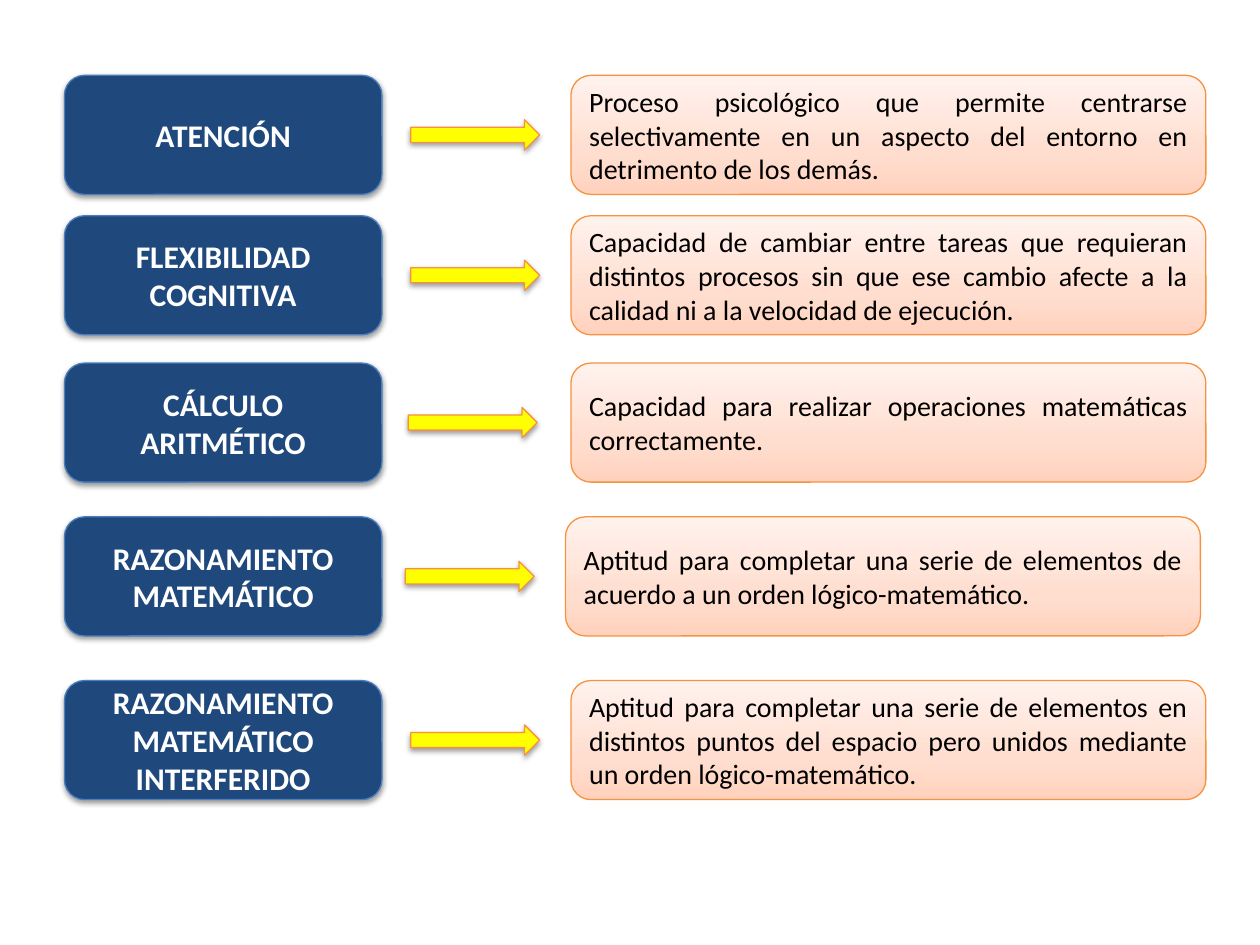
from copy import deepcopy
from dataclasses import dataclass

from lxml import etree
from pptx import Presentation
from pptx.dml.color import RGBColor
from pptx.enum import shapes, text
from pptx.oxml import ns
from pptx.util import Cm, Pt

ABILITIES = [
    ("ATENCIÓN",
     "Proceso psicológico que permite centrarse selectivamente en un aspecto del entorno en detrimento de los demás."),
    ("FLEXIBILIDAD COGNITIVA",
     "Capacidad de cambiar entre tareas que requieran distintos procesos sin que ese cambio afecte a la calidad ni a la velocidad de ejecución."),
    ("CÁLCULO ARITMÉTICO",
     "Capacidad para realizar operaciones matemáticas correctamente."),
    ("RAZONAMIENTO MATEMÁTICO",
     "Aptitud para completar una serie de elementos de acuerdo a un orden lógico-matemático."),
    ("RAZONAMIENTO MATEMÁTICO INTERFERIDO",
     "Aptitud para completar una serie de elementos en distintos puntos del espacio pero unidos mediante un orden lógico-matemático."),
]

ROW_TOPS = [1.52, 4.35, 7.32, 10.42, 13.72]
ARROW_LEFTS = [8.28, 8.28, 8.23, 8.17, 8.28]
MEANING_LEFTS = [11.51, 11.51, 11.51, 11.4, 11.51]
NAME_LEFT, NAME_WIDTH, MEANING_WIDTH, ROW_HEIGHT = 1.3, 6.4, 12.8, 2.4
ARROW_WIDTH, ARROW_HEIGHT = 2.6, 0.61


@dataclass(frozen=True)
class Theme:
    font: str = "Calibri"
    name_size: int = 18
    meaning_size: int = 16
    line_width: float = 0.75
    name_fill: str = "1F497D"
    name_line: str = "4B7EBC"
    name_text: str = "FFFFFF"
    arrow_fill: str = "FFFF00"
    accent_line: str = "F69240"
    meaning_text: str = "000000"
    meaning_stops: tuple = ((0, "FFD2BD"), (0.35, "FFDED0"), (1, "FFF2ED"))


THEME = Theme()


def color(value):
    return RGBColor.from_string(value)


def add_block(page, kind, left, top, width, height, line):
    block = page.shapes.add_shape(kind, Cm(left), Cm(top), Cm(width), Cm(height))
    block.shadow.inherit = False
    block.line.color.rgb = color(line)
    block.line.width = Pt(THEME.line_width)
    return block


def fill_solid(block, value):
    block.fill.solid()
    block.fill.fore_color.rgb = color(value)


def fill_gradient(block, stops):
    block.fill.gradient()
    block.fill.gradient_angle = 90
    stop_list = block.fill._fill._gradFill.find(ns.qn("a:gsLst"))
    stop_list.insert(1, deepcopy(stop_list[0]))
    for stop, (position, value) in zip(block.fill.gradient_stops, stops):
        stop.position = position
        stop.color.rgb = color(value)


def add_shadow(block):
    effects = block._element.spPr.find(ns.qn("a:effectLst"))
    shadow = etree.SubElement(effects, ns.qn("a:outerShdw"), blurRad="40000",
                              dist="20000", dir="5400000", rotWithShape="0")
    shade = etree.SubElement(shadow, ns.qn("a:srgbClr"), val="000000")
    etree.SubElement(shade, ns.qn("a:alpha"), val="38000")


def write(block, words, size, value, alignment, bold=False):
    frame = block.text_frame
    frame.word_wrap = True
    frame.vertical_anchor = text.MSO_ANCHOR.MIDDLE
    para = frame.paragraphs[0]
    para.alignment = alignment
    span = para.add_run()
    span.text = words
    span.font.name = THEME.font
    span.font.size = Pt(size)
    span.font.bold = bold
    span.font.color.rgb = color(value)


def add_row(page, name, meaning, top, arrow_left, meaning_left):
    rounded = shapes.MSO_SHAPE.ROUNDED_RECTANGLE
    name_box = add_block(page, rounded, NAME_LEFT, top, NAME_WIDTH, ROW_HEIGHT, THEME.name_line)
    fill_solid(name_box, THEME.name_fill)
    add_shadow(name_box)
    write(name_box, name, THEME.name_size, THEME.name_text, text.PP_ALIGN.CENTER, True)

    arrow_top = top + (ROW_HEIGHT - ARROW_HEIGHT) / 2
    arrow = add_block(page, shapes.MSO_SHAPE.RIGHT_ARROW, arrow_left, arrow_top,
                      ARROW_WIDTH, ARROW_HEIGHT, THEME.accent_line)
    fill_solid(arrow, THEME.arrow_fill)
    add_shadow(arrow)

    meaning_box = add_block(page, rounded, meaning_left, top, MEANING_WIDTH, ROW_HEIGHT, THEME.accent_line)
    fill_gradient(meaning_box, THEME.meaning_stops)
    write(meaning_box, meaning, THEME.meaning_size, THEME.meaning_text, text.PP_ALIGN.JUSTIFY)


def main():
    deck = Presentation()
    deck.slide_width, deck.slide_height = Cm(25.4), Cm(19.05)
    page = deck.slides.add_slide(deck.slide_layouts[6])
    for (name, meaning), *places in zip(ABILITIES, ROW_TOPS, ARROW_LEFTS, MEANING_LEFTS):
        add_row(page, name, meaning, *places)
    deck.save("out.pptx")


if __name__ == "__main__":
    main()
